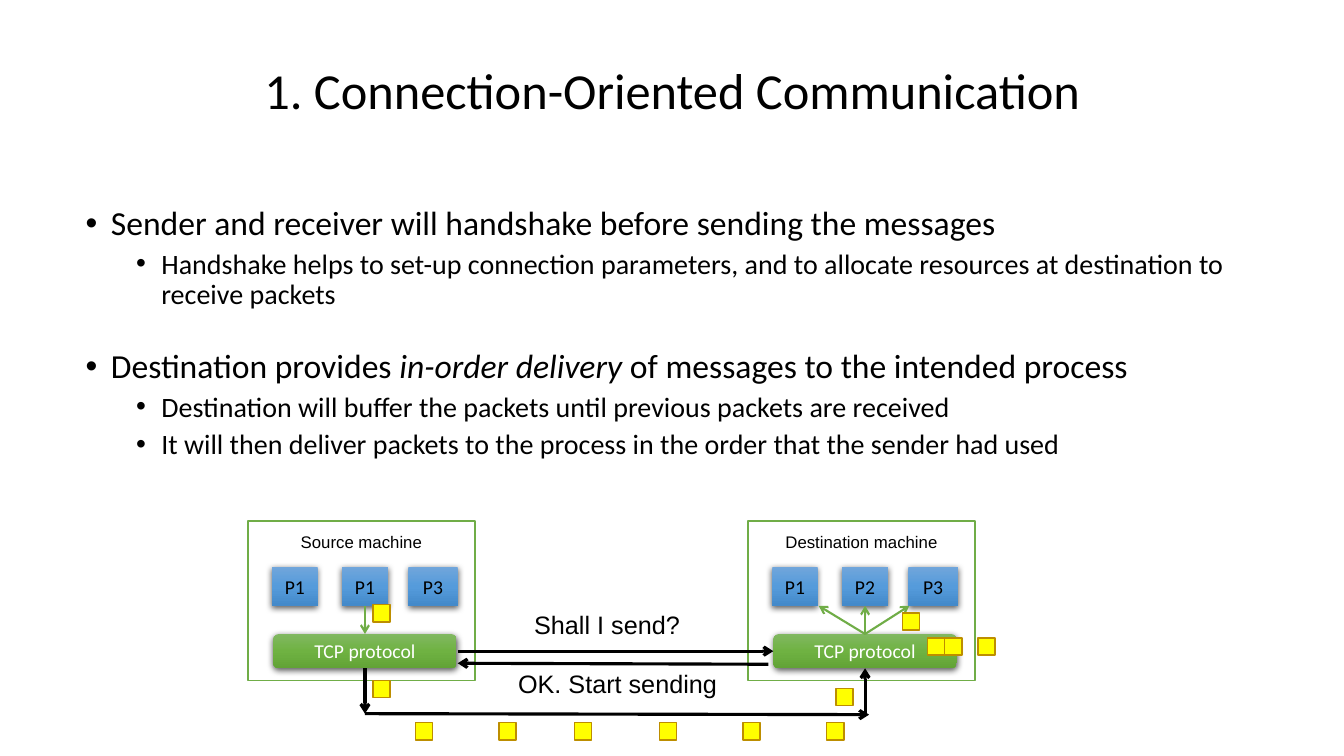
from dataclasses import dataclass
from typing import Any

from lxml.etree import SubElement
from pptx import Presentation
from pptx.dml.color import RGBColor
from pptx.enum.shapes import MSO_CONNECTOR as Connector, MSO_SHAPE as Preset
from pptx.enum.text import MSO_ANCHOR as Anchor, MSO_AUTO_SIZE as AutoSize, PP_ALIGN as Align
from pptx.oxml.ns import qn
from pptx.util import Inches, Pt

BLACK = RGBColor(0x00, 0x00, 0x00)
WHITE = RGBColor(0xFF, 0xFF, 0xFF)
GREEN = RGBColor(0x70, 0xAD, 0x47)
YELLOW = RGBColor(0xFF, 0xFF, 0x00)
OCHRE = RGBColor(0xBD, 0x8E, 0x00)
BLUE_STOPS = [RGBColor(0x71, 0xA6, 0xDB), RGBColor(0x55, 0x9B, 0xDB), RGBColor(0x44, 0x8A, 0xCA)]
GREEN_STOPS = [RGBColor(0x81, 0xB8, 0x61), RGBColor(0x6F, 0xB2, 0x42), RGBColor(0x62, 0xA3, 0x36)]

PACKET_SIZE = 0.17
PROCESS_SLOTS = [(0.24, 0.45), (0.93, 0.46), (1.59, 0.49)]
PROCESS_TOP, PROCESS_BOTTOM = 5.62, 6.01
TCP_TOP, TCP_BOTTOM = 6.29, 6.63
CENTRE = 1.16
TRACK = 7.08


@dataclass
class Bullet:
    runs: list[str]
    level: int
    space_before: float
    italic_run: int = -1


@dataclass
class Arrow:
    start: tuple[float, float]
    end: tuple[float, float]
    color: RGBColor = BLACK
    width: float = 2.25


@dataclass
class Machine:
    name: str
    left: float
    processes: list[str]
    arrows: list[Arrow]


@dataclass
class Label:
    text: str
    left: float
    top: float
    width: float


BULLETS = [
    Bullet(["Sender and receiver will handshake before sending the messages"], 0, 0),
    Bullet(["Handshake helps to set-up connection parameters, and to allocate "
            "resources at destination to receive packets"], 1, 5),
    Bullet(["Destination provides ", "in-order delivery",
            " of messages to the intended process"], 0, 28, 1),
    Bullet(["Destination will buffer the packets until previous packets are received"], 1, 5),
    Bullet(["It will then deliver packets to the process in the order that the sender had used"], 1, 5),
]
MACHINES = [
    Machine("Destination machine", 7.42, ["P1", "P2", "P3"],
            [Arrow((8.58, TCP_TOP), (x, PROCESS_BOTTOM), GREEN, 1.5) for x in (8.12, 8.58, 9.02)]),
    Machine("Source machine", 2.46, ["P1", "P1", "P3"],
            [Arrow((3.62, PROCESS_BOTTOM), (3.62, TCP_TOP), GREEN, 1.5)]),
]
MESSAGE_ARROWS = [
    Arrow((8.58, TRACK), (8.58, TCP_BOTTOM)),
    Arrow((3.62, TCP_BOTTOM), (3.62, TRACK)),
    Arrow((4.54, 6.46), (7.67, 6.46)),
    Arrow((7.62, 6.59), (4.54, 6.58)),
    Arrow((3.62, TRACK), (8.62, 7.09)),
]
LABELS = [Label("Shall I send?", 5.2, 6, 1.83), Label("OK. Start sending", 5.04, 6.58, 2.25)]
PACKETS = [(3.7, 6), (3.7, 6.75), (8.29, 6.83), (8.95, 6.08)]
PACKETS += [(x, 7.17) for x in (4.12, 4.95, 5.7, 6.54, 7.37, 8.2)]
PACKETS += [(x, 6.33) for x in (9.2, 9.37, 9.7)]


def place(shape: Any, left: float, top: float, width: float, height: float) -> None:
    shape.left, shape.top = Inches(left), Inches(top)
    shape.width, shape.height = Inches(width), Inches(height)


def style(font: Any, size: float, name: str = "Calibri", color: RGBColor = BLACK) -> None:
    font.size, font.name = Pt(size), name
    font.color.rgb = color


def add_flat(shapes: Any, left: float, top: float, width: float, height: float,
             fill: RGBColor, line: RGBColor) -> None:
    shape = shapes.add_shape(Preset.RECTANGLE, Inches(left), Inches(top), Inches(width), Inches(height))
    shape.shadow.inherit = False
    shape.fill.solid()
    shape.fill.fore_color.rgb = fill
    shape.line.color.rgb = line
    shape.line.width = Pt(1)


def add_raised(shapes: Any, preset: Any, left: float, top: float, width: float, height: float,
               text: str, stops: list[RGBColor], color: RGBColor) -> None:
    shape = shapes.add_shape(preset, Inches(left), Inches(top), Inches(width), Inches(height))
    shape.line.fill.background()
    shape.fill.gradient()
    shape.fill.gradient_angle = 270
    properties = shape._element.spPr
    stop_list = properties.find(qn("a:gradFill")).find(qn("a:gsLst"))
    for stop in list(stop_list):
        stop_list.remove(stop)
    for index, stop_color in enumerate(stops):
        stop = SubElement(stop_list, qn("a:gs"), pos=str(index * 50000))
        SubElement(stop, qn("a:srgbClr"), val=str(stop_color))
    shape.shadow.inherit = False
    shadow = SubElement(properties.find(qn("a:effectLst")), qn("a:outerShdw"), blurRad=str(Pt(4.5)),
                        dist=str(Pt(1.5)), dir="5400000", algn="ctr", rotWithShape="0")
    shadow_color = SubElement(shadow, qn("a:srgbClr"), val=str(BLACK))
    SubElement(shadow_color, qn("a:alpha"), val="63000")
    frame = shape.text_frame
    frame.margin_left = frame.margin_right = 0
    frame.margin_top = frame.margin_bottom = 0
    frame.vertical_anchor = Anchor.MIDDLE
    frame.text = text
    frame.paragraphs[0].alignment = Align.CENTER
    style(frame.paragraphs[0].runs[0].font, 14, color=color)


def add_arrow(shapes: Any, arrow: Arrow) -> None:
    points = [Inches(value) for value in (*arrow.start, *arrow.end)]
    connector = shapes.add_connector(Connector.STRAIGHT, *points)
    connector.line.color.rgb = arrow.color
    connector.line.width = Pt(arrow.width)
    SubElement(connector.line._get_or_add_ln(), qn("a:tailEnd"), type="arrow")
    SubElement(connector._element.spPr, qn("a:effectLst"))


def add_label(shapes: Any, label: Label, height: float, size: float, alignment: Any) -> None:
    box = shapes.add_textbox(Inches(label.left), Inches(label.top), Inches(label.width), Inches(height))
    frame = box.text_frame
    frame.word_wrap = True
    frame.text = label.text
    frame.paragraphs[0].alignment = alignment
    style(frame.paragraphs[0].runs[0].font, size, "Arial")


def add_machine(slide: Any, machine: Machine) -> None:
    shapes = slide.shapes.add_group_shape().shapes
    add_flat(shapes, machine.left, 5.17, 2.25, 1.58, WHITE, GREEN)
    for name, (offset, width) in zip(machine.processes, PROCESS_SLOTS):
        add_raised(shapes, Preset.RECTANGLE, machine.left + offset, PROCESS_TOP, width,
                   PROCESS_BOTTOM - PROCESS_TOP, name, BLUE_STOPS, BLACK)
    add_raised(shapes, Preset.ROUNDED_RECTANGLE, machine.left + CENTRE - 0.91, TCP_TOP, 1.82,
               TCP_BOTTOM - TCP_TOP, "TCP protocol", GREEN_STOPS, WHITE)
    for arrow in machine.arrows:
        add_arrow(shapes, arrow)
    add_label(shapes, Label(machine.name, machine.left, 5.23, 2.25), 0.3, 12, Align.CENTER)


def fill_title(title: Any) -> None:
    place(title, 2.17, 0.35, 9, 1.15)
    frame = title.text_frame
    frame.text = "1. Connection-Oriented Communication"
    frame.auto_size = AutoSize.NONE
    frame.vertical_anchor = Anchor.MIDDLE
    paragraph = frame.paragraphs[0]
    paragraph.alignment = Align.CENTER
    paragraph.line_spacing = 0.9
    style(paragraph.runs[0].font, 36)


def fill_body(body: Any) -> None:
    place(body, 0.75, 2, 11.83, 5.12)
    frame = body.text_frame
    frame.auto_size = AutoSize.NONE
    for index, bullet in enumerate(BULLETS):
        paragraph = frame.add_paragraph() if index else frame.paragraphs[0]
        paragraph.level = bullet.level
        paragraph.line_spacing = 0.9
        paragraph.space_before = Pt(bullet.space_before)
        properties = paragraph._p.get_or_add_pPr()
        properties.set("marL", str(Inches(0.25 + 0.5 * bullet.level)))
        properties.set("indent", str(Inches(-0.25)))
        SubElement(properties, qn("a:buFont"), typeface="Arial")
        SubElement(properties, qn("a:buChar"), char="•")
        for position, text in enumerate(bullet.runs):
            run = paragraph.add_run()
            run.text = text
            style(run.font, 24 - 4 * bullet.level)
            run.font.italic = position == bullet.italic_run


def main() -> None:
    presentation = Presentation()
    presentation.slide_width, presentation.slide_height = Inches(13.33), Inches(7.5)
    slide = presentation.slides.add_slide(presentation.slide_layouts[1])
    fill_title(slide.shapes.title)
    fill_body(slide.placeholders[1])
    for machine in MACHINES:
        add_machine(slide, machine)
    for arrow in MESSAGE_ARROWS:
        add_arrow(slide.shapes, arrow)
    for label in LABELS:
        add_label(slide.shapes, label, 0.4, 18, Align.LEFT)
    for left, top in PACKETS:
        add_flat(slide.shapes, left, top, PACKET_SIZE, PACKET_SIZE, YELLOW, OCHRE)
    presentation.save("out.pptx")


if __name__ == "__main__":
    main()
